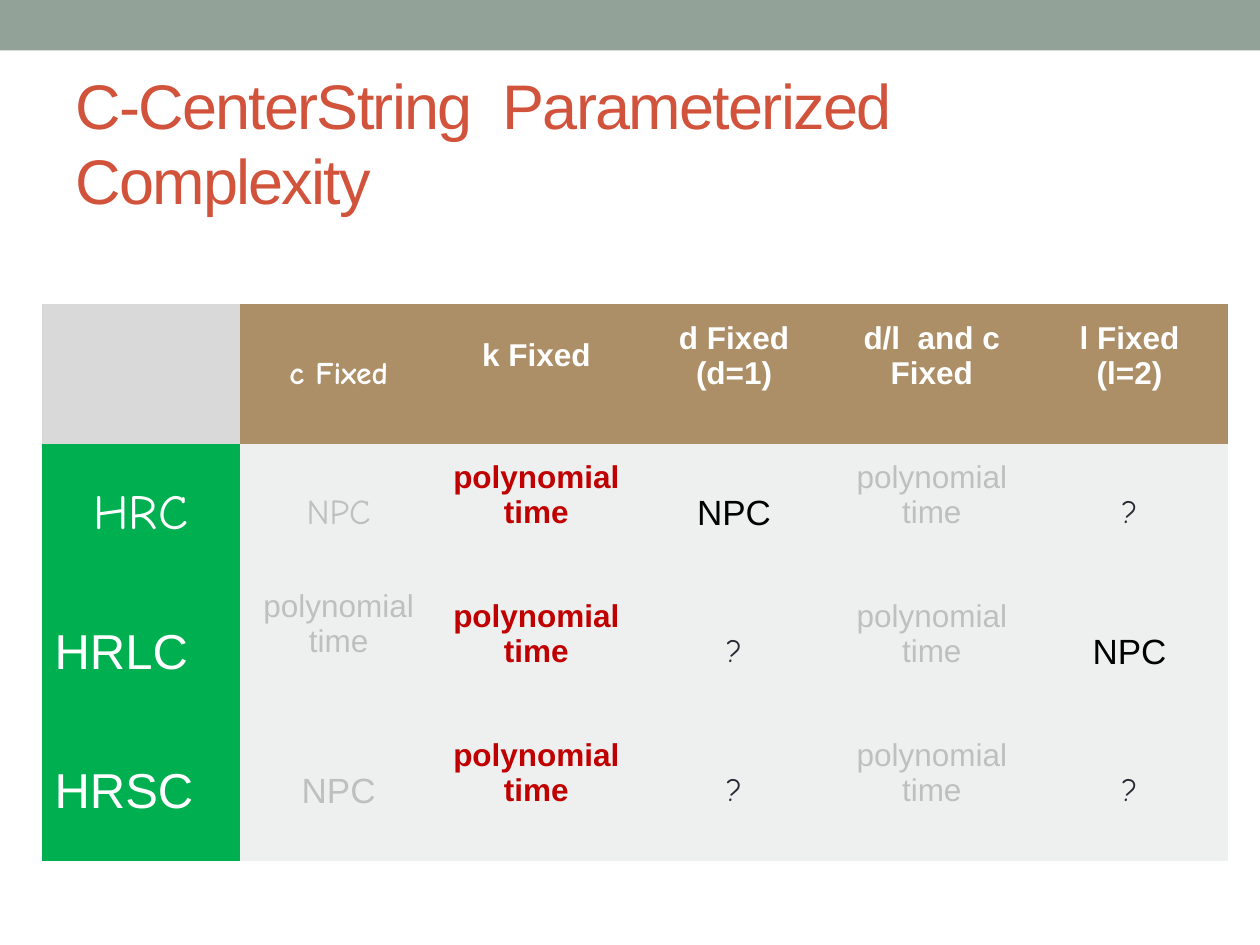
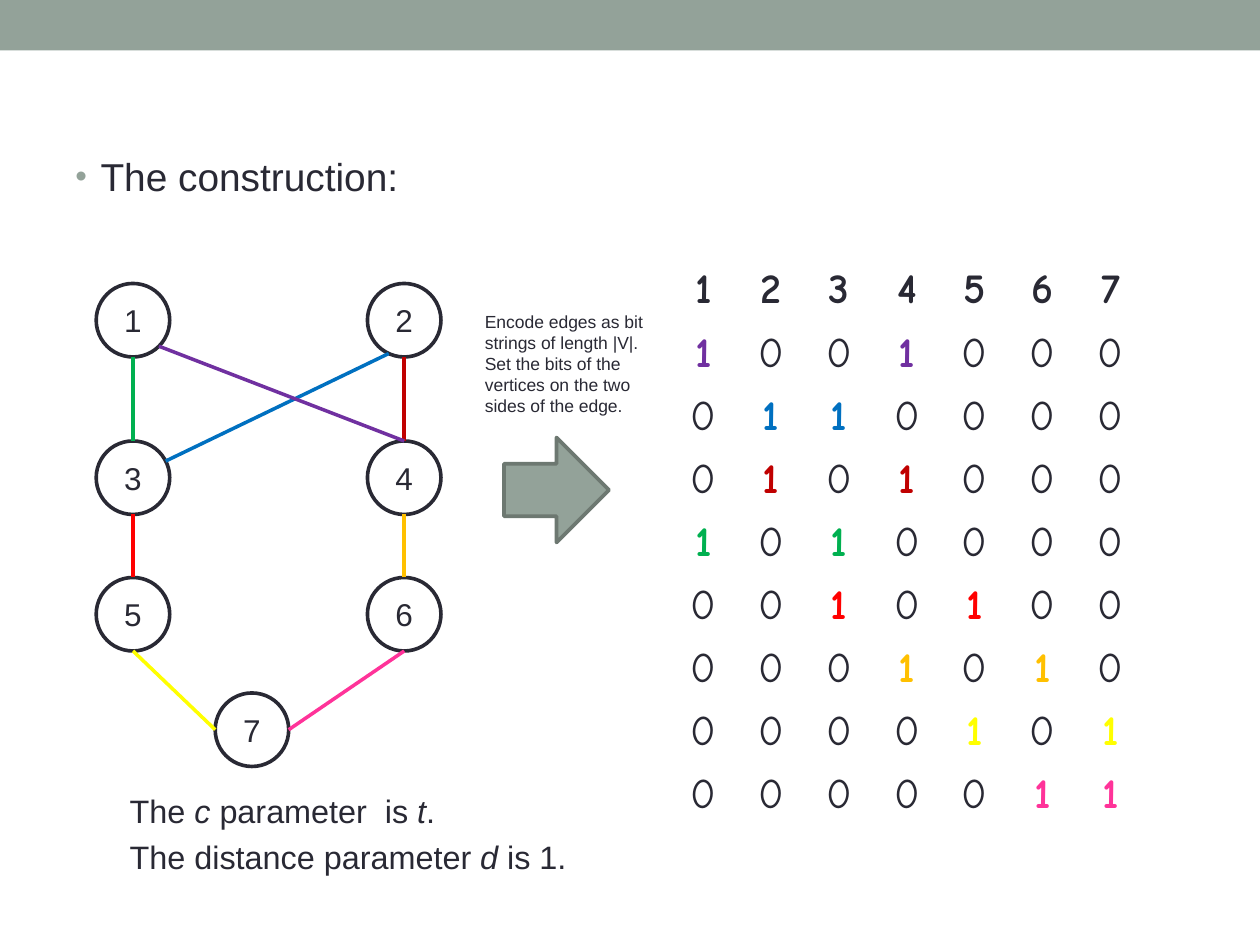
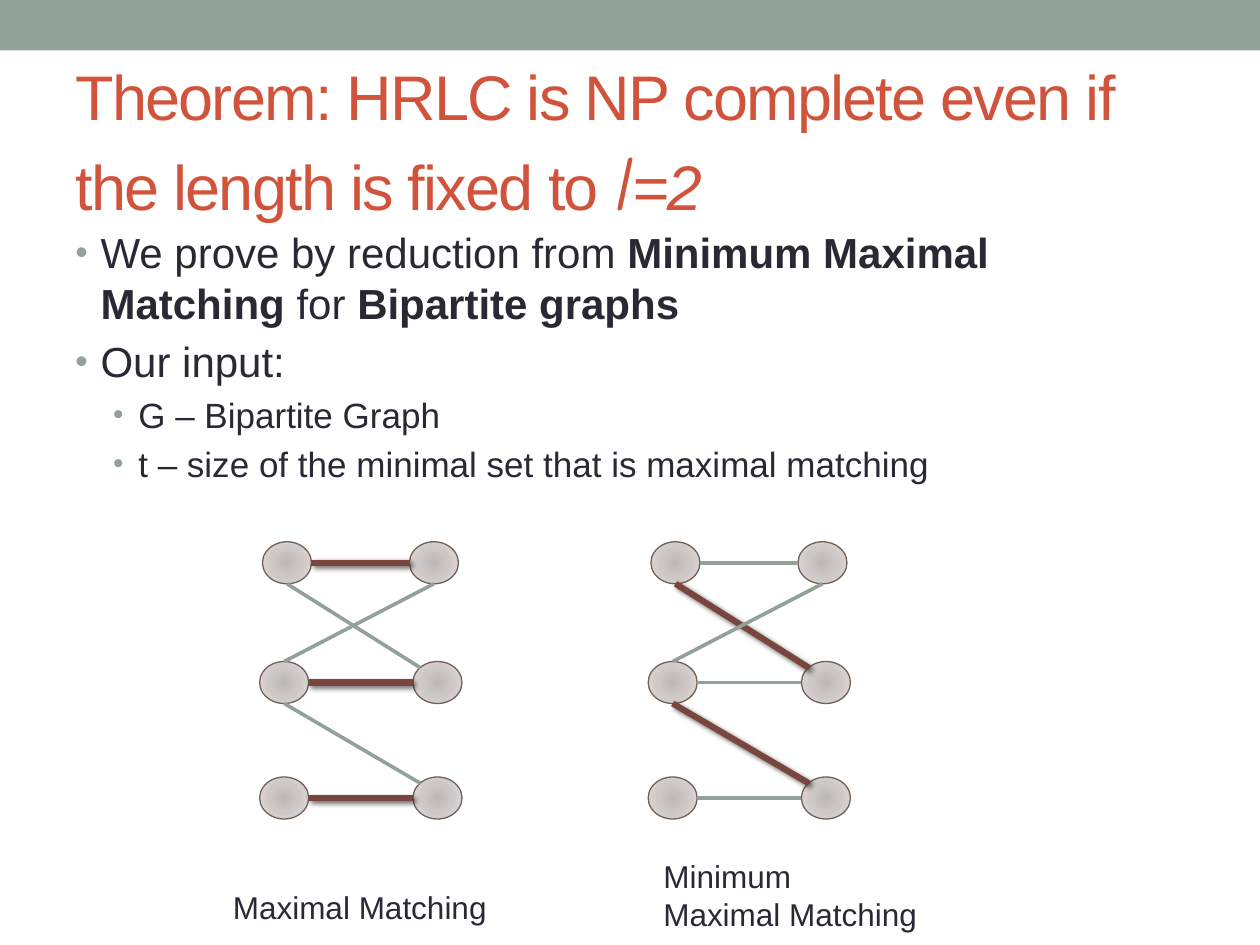
from dataclasses import dataclass, field
from math import cos, radians, sin

from pptx import Presentation
from pptx import util as u
from pptx.dml.color import RGBColor
from pptx.enum import shapes, text
from pptx.oxml import parse_xml
from pptx.oxml.ns import nsdecls, qn


@dataclass(frozen=True)
class Theme:
    ink: str = "292934"
    sage: str = "93A299"
    sage_dark: str = "6D7871"
    rust: str = "D2533C"
    tan: str = "AD8F67"
    green: str = "00B050"
    crimson: str = "C00000"
    faded: str = "BFBFBF"
    corner: str = "D9D9D9"
    cell: str = "EEF0EF"
    white: str = "FFFFFF"
    black: str = "000000"
    matched: str = "79463D"
    vertex_rim: str = "726056"
    vertex_stops: tuple = ((0, "BDB8B6"), (45, "CDC7C5"), (100, "E4E1DF"))
    sans: str = "Arial"
    comic: str = "Comic Neue"
    title: float = 36
    lead: float = 24
    label: float = 18
    note: float = 10
    outline: float = 2.08


T = Theme()
MIDDLE = text.MSO_ANCHOR.MIDDLE
CENTER = text.PP_ALIGN.CENTER
OVAL = shapes.MSO_SHAPE.OVAL
NO_TABLE_STYLE = "{2D5ABB26-0587-4C30-8999-92F81FD0307C}"
BODY = dict(name=T.sans, size=T.label, color=T.ink)
TITLE = dict(name=T.sans, size=T.title, color=T.rust, spacing=-100)


@dataclass
class Para:
    runs: list
    layout: dict = field(default_factory=dict)
    indent: float = 0
    bullet: bool = False


def rgb(value):
    return RGBColor.from_string(value)


def set_values(target, values):
    for key, value in values.items():
        setattr(target, key, value)


def format_run(run, style):
    values = dict(style)
    run.font.color.rgb = rgb(values.pop("color"))
    values["size"] = u.Pt(values["size"])
    spacing = values.pop("spacing", None)
    set_values(run.font, values)
    if spacing:
        run.font._element.set("spc", str(spacing))


def add_bullet(paragraph, indent):
    props = paragraph._p.get_or_add_pPr()
    props.set("marL", str(u.Pt(indent)))
    props.set("indent", str(u.Pt(-14.4)))
    for xml in (
        f'<a:buClr {nsdecls("a")}><a:srgbClr val="{T.sage}"/></a:buClr>',
        f'<a:buSzPct {nsdecls("a")} val="85000"/>',
        f'<a:buFont {nsdecls("a")} typeface="{T.sans}"/>',
        f'<a:buChar {nsdecls("a")} char="•"/>',
    ):
        props.append(parse_xml(xml))


def write(frame, paras, style, **frame_values):
    set_values(frame, frame_values)
    for index, para in enumerate(paras):
        paragraph = frame.paragraphs[0] if index == 0 else frame.add_paragraph()
        set_values(paragraph, para.layout)
        if para.bullet:
            add_bullet(paragraph, para.indent)
        elif para.indent:
            paragraph._p.get_or_add_pPr().set("marL", str(u.Pt(para.indent)))
        for words, changes in para.runs:
            run = paragraph.add_run()
            run.text = words
            format_run(run, {**style, **changes})


def plain(words, **layout):
    return [Para([(line, {})], layout) for line in words.split("\n")]


def add_text(slide, box, paras, style=BODY, **frame_values):
    frame = slide.shapes.add_textbox(*map(u.Pt, box)).text_frame
    write(frame, paras, style, **{"word_wrap": True, **frame_values})


def add_title(slide, *runs):
    add_text(slide, (36, 42, 648, 78), [Para(runs)], TITLE, vertical_anchor=MIDDLE)


def add_figure(slide, kind, box, fill=None, line=None, width=T.outline):
    figure = slide.shapes.add_shape(kind, *map(u.Pt, box))
    figure.shadow.inherit = False
    if fill:
        figure.fill.solid()
        figure.fill.fore_color.rgb = rgb(fill)
    if line:
        figure.line.color.rgb = rgb(line)
        figure.line.width = u.Pt(width)
    else:
        figure.line.fill.background()
    return figure


def add_vertex(slide, box):
    vertex = add_figure(slide, OVAL, box, line=T.vertex_rim, width=0.75)
    vertex.fill.background()
    stops = "".join(
        f'<a:gs pos="{place * 1000}"><a:srgbClr val="{color}"/></a:gs>'
        for place, color in T.vertex_stops
    )
    glow = parse_xml(
        f'<a:gradFill {nsdecls("a")} rotWithShape="1"><a:gsLst>{stops}</a:gsLst>'
        '<a:path path="circle"><a:fillToRect l="100000" t="100000" r="100000" b="100000"/>'
        "</a:path></a:gradFill>"
    )
    props = vertex._element.spPr
    props.replace(props.find(qn("a:noFill")), glow)


def rim(box, angle):
    left, top, width, height = box
    turn = radians(angle)
    return left + width / 2 * (1 + cos(turn)), top + height / 2 * (1 + sin(turn))


def add_edge(slide, start, end, color, width, shadow=False):
    edge = slide.shapes.add_connector(
        shapes.MSO_CONNECTOR.STRAIGHT, *map(u.Pt, (*start, *end))
    )
    edge.line.color.rgb = rgb(color)
    edge.line.width = u.Pt(width)
    effect = (
        f'<a:outerShdw blurRad="{u.Pt(3)}" dist="{u.Pt(2)}" dir="2700000" rotWithShape="0">'
        f'<a:srgbClr val="{T.black}"><a:alpha val="60000"/></a:srgbClr></a:outerShdw>'
    )
    edge._element.spPr.append(
        parse_xml(f'<a:effectLst {nsdecls("a")}>{effect if shadow else ""}</a:effectLst>')
    )


def add_grid(slide, box, rows, columns, row_height):
    holder = slide.shapes.add_table(rows, columns, *map(u.Pt, box))
    grid = holder.table
    grid._tbl.tblPr.find(qn("a:tableStyleId")).text = NO_TABLE_STYLE
    set_values(grid, dict(first_row=False, horz_banding=False))
    for row in grid.rows:
        row.height = u.Pt(row_height)
    holder.height = u.Pt(box[3])
    return grid


def fill_cell(cell, words, style, fill=None, align=CENTER, **cell_values):
    set_values(cell, cell_values)
    if fill:
        cell.fill.solid()
        cell.fill.fore_color.rgb = rgb(fill)
    else:
        cell.fill.background()
    if words:
        write(cell.text_frame, plain(words, alignment=align), style)


def new_slide(deck):
    slide = deck.slides.add_slide(deck.slide_layouts[6])
    add_figure(slide, shapes.MSO_SHAPE.RECTANGLE, (0, 0, 720, 28.8), T.sage)
    return slide


def build_complexity(deck):
    slide = new_slide(deck)
    add_title(slide, ("C-CenterString  Parameterized Complexity", {}))

    header = dict(BODY, color=T.white, bold=True)
    family = dict(BODY, color=T.white, size=28)
    faded = dict(BODY, color=T.faded)
    solved = dict(BODY, color=T.crimson, bold=True)
    hard = dict(BODY, color=T.black, size=20)
    comic = dict(name=T.comic)
    centred = dict(vertical_anchor=MIDDLE)
    raised = dict(centred, margin_bottom=u.Pt(24.3))
    top = dict(vertical_anchor=text.MSO_ANCHOR.TOP)
    left = dict(centred, align=text.PP_ALIGN.LEFT)

    known = ("polynomial time", faded, raised)
    fast = ("polynomial time", solved, raised)
    unknown = ("?", {**BODY, **comic}, centred)
    npc = ("NPC", hard, centred)
    faded_npc = dict(faded, size=20)
    rows = [
        [
            ("", header, {}),
            ("c Fixed", {**header, **comic}, centred),
            ("k Fixed", header, raised),
            ("d Fixed\n(d=1)", header, raised),
            ("d/l  and c Fixed", header, raised),
            ("l Fixed\n(l=2)", header, raised),
        ],
        [
            ("HRC", {**family, **comic}, centred),
            ("NPC", {**faded_npc, **comic}, centred),
            fast, npc, known, unknown,
        ],
        [
            ("HRLC", family, left),
            ("polynomial time", faded, top),
            fast, unknown, known, npc,
        ],
        [
            ("HRSC", family, left),
            ("NPC", faded_npc, centred),
            fast, unknown, known, unknown,
        ],
    ]
    results = add_grid(slide, (24, 174, 678, 318), 4, 6, 79.5)
    for r, row in enumerate(rows):
        for c, (words, style, placing) in enumerate(row):
            if r == 0:
                fill = T.tan if c else T.corner
            else:
                fill = T.cell if c else T.green
            fill_cell(results.cell(r, c), words, style, fill, **placing)


def build_construction(deck):
    slide = new_slide(deck)
    italic = dict(italic=True)
    closing = dict(size=18.5)
    add_text(slide, (36, 84, 648, 438), [
        Para([("The construction:", dict(size=22.2))],
             dict(space_before=u.Pt(4.4)), 14.4, True),
        Para([("The ", {}), ("c ", italic), ("parameter  is ", {}), ("t", italic), (".", {})],
             dict(space_before=u.Pt(338)), 31),
        Para([("The distance parameter ", {}), ("d ", italic), ("is 1.", {})],
             dict(space_before=u.Pt(3.7)), 31),
    ], {**BODY, **closing})

    corners = [(55, 162), (210, 162), (55, 252), (210, 252), (55, 330), (210, 330), (123, 396)]
    nodes = {number: (*corner, 42, 42) for number, corner in enumerate(corners, 1)}
    for number, box in nodes.items():
        node = add_figure(slide, OVAL, box, T.white, T.ink)
        write(node.text_frame, plain(str(number), alignment=CENTER), BODY,
              vertical_anchor=MIDDLE)

    edges = [
        (1, 45, 4, -90, "7030A0"),
        (2, 115, 3, -27, "0070C0"),
        (2, 90, 4, -90, T.crimson),
        (1, 90, 3, -90, T.green),
        (3, 90, 5, -90, "FF0000"),
        (4, 90, 6, -90, "FFC000"),
        (5, 90, 7, 180, "FFFF00"),
        (6, 90, 7, 0, "FF3399"),
    ]
    for first, leave, second, arrive, color in reversed(edges):
        add_edge(slide, rim(nodes[first], leave), rim(nodes[second], arrive), color, 2)

    add_figure(slide, shapes.MSO_SHAPE.RIGHT_ARROW, (288, 250, 60, 60), T.sage, T.sage_dark)

    digit = dict(BODY, name=T.comic, size=T.lead)
    bits = add_grid(slide, (382.5, 148.5, 271.6, 324), len(edges) + 1, len(nodes), 29.5)
    for number in nodes:
        fill_cell(bits.cell(0, number - 1), str(number), dict(digit, bold=True))
        for row, (first, _, second, _, color) in enumerate(edges, 1):
            is_end = number in (first, second)
            style = dict(digit, color=color, bold=True) if is_end else digit
            fill_cell(bits.cell(row, number - 1), str(int(is_end)), style)

    add_text(slide, (270, 174, 108, 67), plain(
        "Encode edges as bit strings of length |V|. "
        "Set the bits of the vertices on the two sides of the edge."
    ), dict(BODY, size=T.note))


def add_matching(slide, shift, matched):
    spots = {
        "L1": (150, 309.6), "R1": (234, 309.6),
        "L2": (148.4, 378), "R2": (236, 378),
        "L3": (148.4, 444), "R3": (236, 444),
    }
    vertices = {name: (x + shift, y, 28, 24) for name, (x, y) in spots.items()}
    for box in vertices.values():
        add_vertex(slide, box)
    for first, leave, second, arrive in (
        ("L1", 0, "R1", 180),
        ("L1", 90, "R2", 225),
        ("R1", 90, "L2", -90),
        ("L2", 90, "R3", 225),
        ("L2", 0, "R2", 180),
        ("L3", 0, "R3", 180),
    ):
        chosen = first + second in matched
        color, width = (T.matched, 3.5) if chosen else (T.sage, T.outline)
        add_edge(slide, rim(vertices[first], leave), rim(vertices[second], arrive),
                 color, width, chosen)


def build_theorem(deck):
    slide = new_slide(deck)
    add_title(
        slide,
        ("Theorem: HRLC is NP complete even if the length is fixed to ", {}),
        ("l", dict(name=T.comic, size=44, italic=True)),
        ("=2", dict(italic=True)),
    )
    bold = dict(bold=True)
    detail = dict(size=20)
    points = [
        ([("We prove by reduction from ", {}), ("Minimum Maximal Matching", bold),
          (" for ", {}), ("Bipartite graphs", bold)], 14.4, 4.8),
        ([("Our input:", {})], 14.4, 4.8),
        ([("G – Bipartite Graph", detail)], 36, 4),
        ([("t – size of the minimal set that is maximal matching", detail)], 36, 4),
    ]
    add_text(slide, (36, 126, 648, 384), [
        Para(runs, dict(space_before=u.Pt(gap)), indent, True) for runs, indent, gap in points
    ], dict(BODY, size=T.lead))

    add_matching(slide, 0, {"L1R1", "L2R2", "L3R3"})
    add_matching(slide, 222, {"L1R2", "L2R3"})
    for box, caption in (
        ((126, 504, 161, 29), "Maximal Matching"),
        ((372, 486, 161, 51), "Minimum\nMaximal Matching"),
    ):
        add_text(slide, box, plain(caption), word_wrap=False)


def main():
    deck = Presentation()
    set_values(deck, dict(slide_width=u.Pt(720), slide_height=u.Pt(540)))
    for build in (build_complexity, build_construction, build_theorem):
        build(deck)
    deck.save("out.pptx")


if __name__ == "__main__":
    main()
